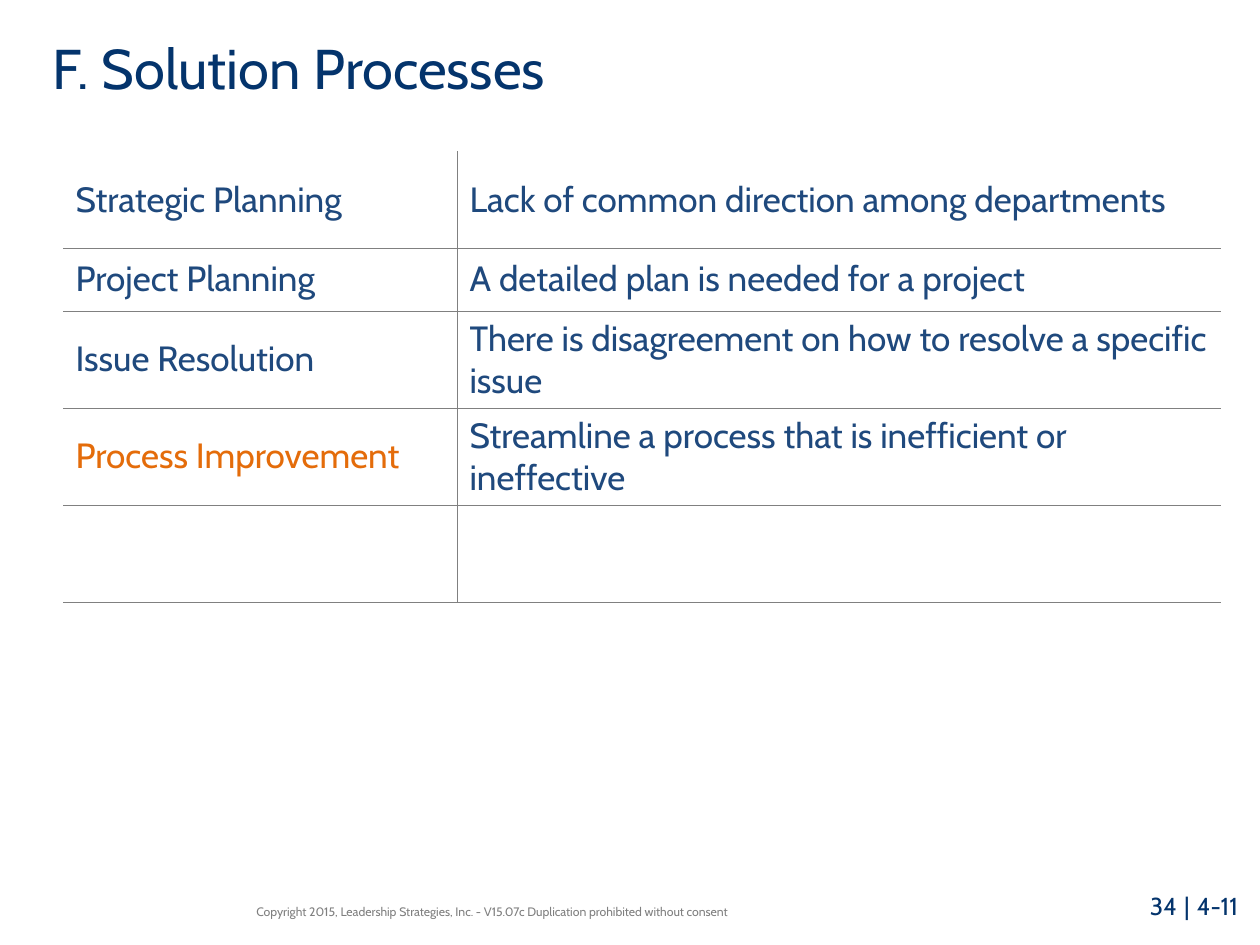
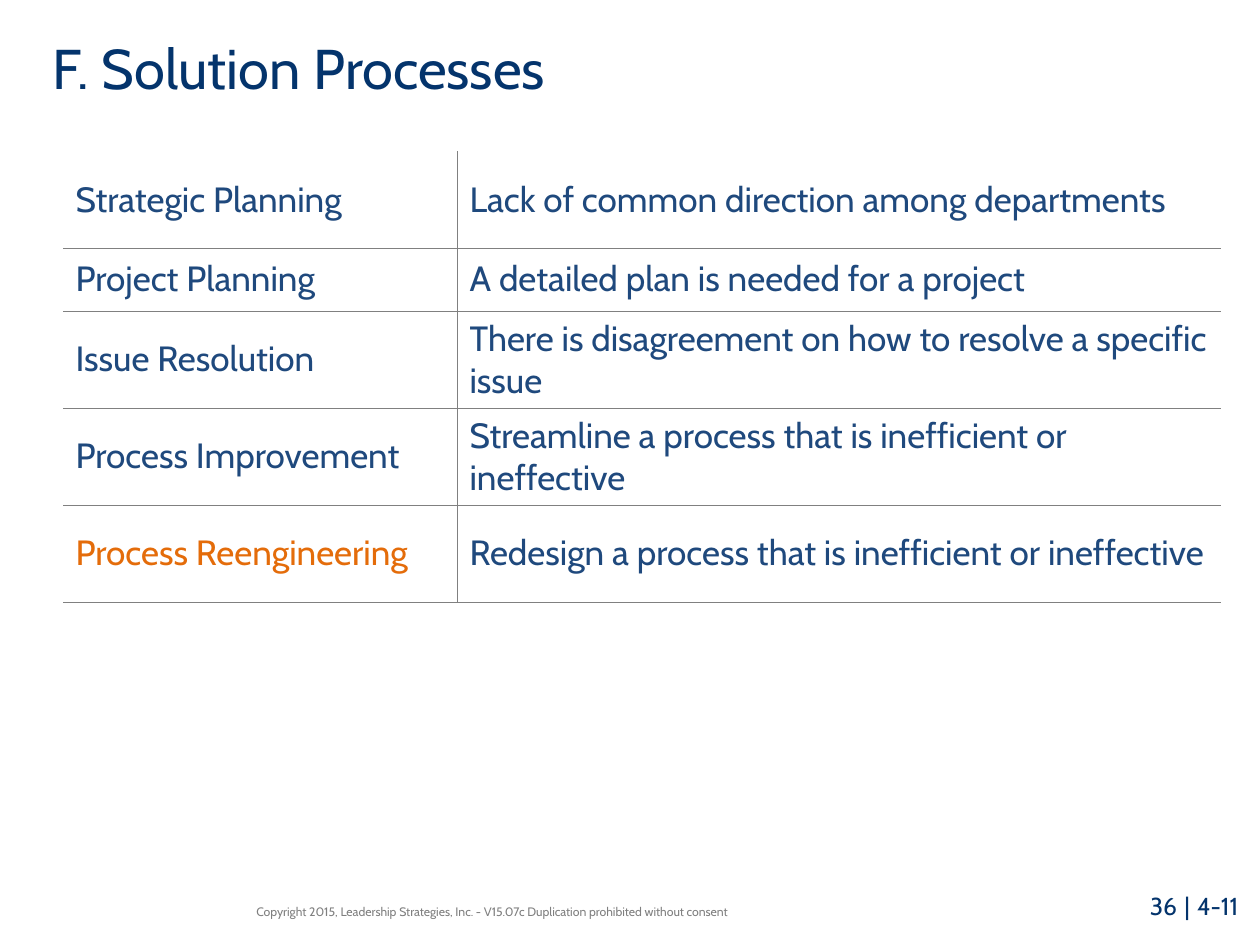
from typing import NamedTuple

from lxml import etree
from pptx import Presentation, util as u
from pptx.dml.color import RGBColor
from pptx.enum import text
from pptx.oxml import ns

PX = u.Inches(1) / 126
NAVY, BLUE, ORANGE, GREY, BLACK = "04346C", "1F497D", "E46C0A", "808080", "000000"
FONT = "Cabin"
COLUMNS = (394, 764)
ROWS = (97, 63, 97, 97, 97)
COPYRIGHT = ("Copyright 2015, Leadership Strategies, Inc. - V15.07c "
             "Duplication prohibited without consent")


class Box(NamedTuple):
    left: int
    top: int
    width: int
    height: int


class Process(NamedTuple):
    name: str
    use: str


class Page(NamedTuple):
    number: str
    shown: int


TITLE = Box(40, 0, 940, 134)
TABLE = Box(63, 151, sum(COLUMNS), sum(ROWS))
FOOTER = Box(244, 892, 585, 39)
NUMBER = Box(1128, 878, 132, 67)

PROCESSES = (
    Process("Strategic Planning", "Lack of common direction among departments"),
    Process("Project Planning", "A detailed plan is needed for a project"),
    Process("Issue Resolution", "There is disagreement on how to resolve a specific issue"),
    Process("Process Improvement", "Streamline a process that is inefficient or ineffective"),
    Process("Process Reengineering", "Redesign a process that is inefficient or ineffective"),
)
PAGES = (Page("34", 4), Page("36", 5))


def px(n: int) -> u.Emu:
    return u.Emu(round(n * PX))


def rgb(value: str) -> RGBColor:
    return RGBColor.from_string(value)


def style(font, size: int, color: str, name: str = FONT) -> None:
    font.size, font.name = u.Pt(size), name
    font.color.rgb = rgb(color)


def add_text(s, box: Box, anchor=text.MSO_ANCHOR.MIDDLE):
    """Add a wrapping text box and return its first paragraph."""
    tf = s.shapes.add_textbox(*map(px, box)).text_frame
    tf.word_wrap = True
    tf.vertical_anchor = anchor
    return tf.paragraphs[0]


def add_line(s, box: Box, words: str, size: int, color: str) -> None:
    p = add_text(s, box)
    p.text = words
    style(p.runs[0].font, size, color)


def add_page_number(s, number: str) -> None:
    p = add_text(s, NUMBER, text.MSO_ANCHOR.TOP)
    p.alignment = text.PP_ALIGN.CENTER
    for part in (number, " ", "|", " ", "4-11"):
        r = p.add_run()
        r.text = part
        if part == " ":
            style(r.font, 18, BLACK, "Calibri")
        else:
            style(r.font, 14, NAVY)


def set_borders(cell, ruled: str) -> None:
    """Rule the sides named in ruled (of L, R, T, B) and clear the others."""
    tc_pr = cell._tc.get_or_add_tcPr()
    for side in "LRTB":
        ln = etree.SubElement(tc_pr, ns.qn(f"a:ln{side}"), w=str(u.Pt(0.5)))
        if side in ruled:
            fill = etree.SubElement(ln, ns.qn("a:solidFill"))
            etree.SubElement(fill, ns.qn("a:srgbClr"), val=GREY)
        else:
            etree.SubElement(ln, ns.qn("a:noFill"))


def add_process_table(s, shown: int) -> None:
    """List the first processes shown, the latest name highlighted."""
    table = s.shapes.add_table(len(ROWS), len(COLUMNS), *map(px, TABLE)).table
    table.first_row = table.horz_banding = False
    for column, width in zip(table.columns, COLUMNS):
        column.width = px(width)
    for i, (row, height, process) in enumerate(zip(table.rows, ROWS, PROCESSES)):
        row.height = px(height)
        for j, (cell, words) in enumerate(zip(row.cells, process)):
            set_borders(cell, "RL"[j] + "B" + ("T" if i else ""))
            cell.fill.background()
            cell.vertical_anchor = text.MSO_ANCHOR.MIDDLE
            if i < shown:
                cell.text = words
                latest = i == shown - 1 and j == 0
                style(cell.text_frame.paragraphs[0].runs[0].font, 20,
                      ORANGE if latest else BLUE)


def add_page(prs, page: Page) -> None:
    s = prs.slides.add_slide(prs.slide_layouts[6])
    add_line(s, TITLE, "F. Solution Processes", 32, NAVY)
    add_process_table(s, page.shown)
    add_line(s, FOOTER, COPYRIGHT, 7, GREY)
    add_page_number(s, page.number)


def main() -> None:
    prs = Presentation()
    prs.slide_width, prs.slide_height = px(1260), px(945)
    for page in PAGES:
        add_page(prs, page)
    prs.save("out.pptx")


if __name__ == "__main__":
    main()
